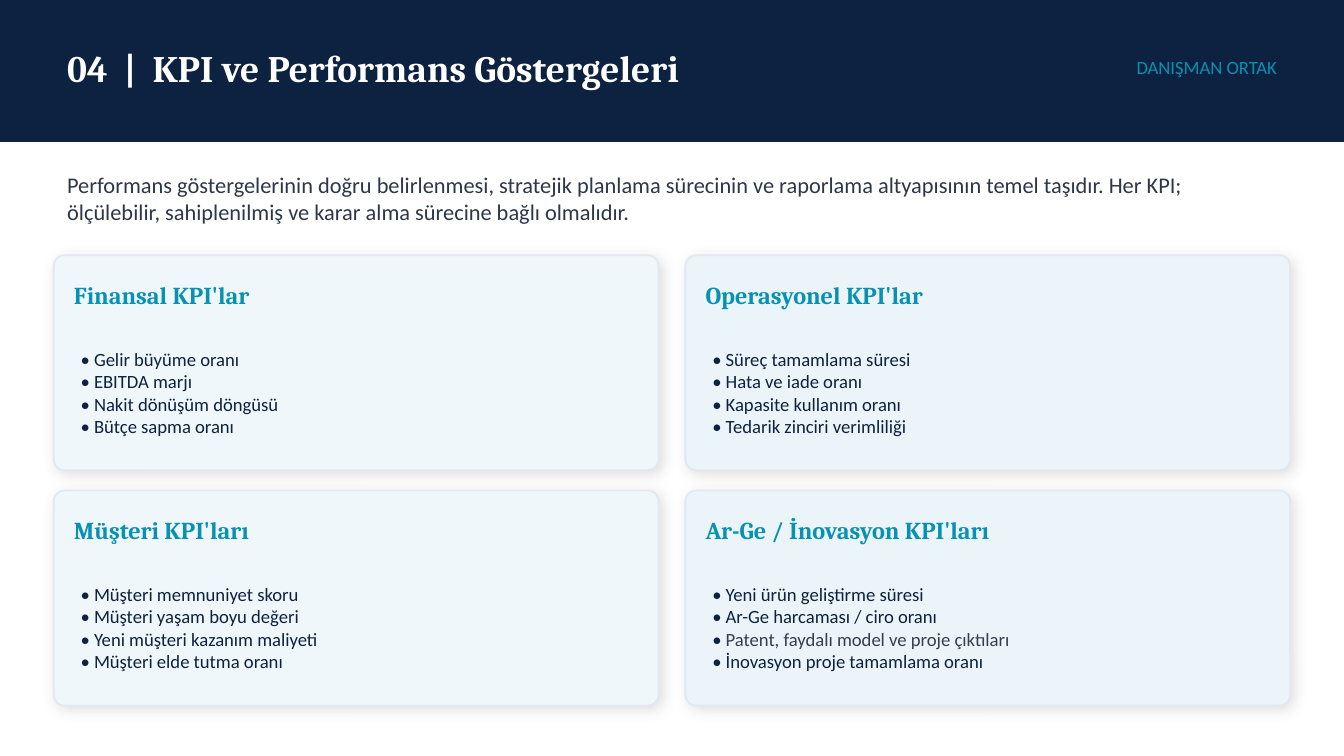
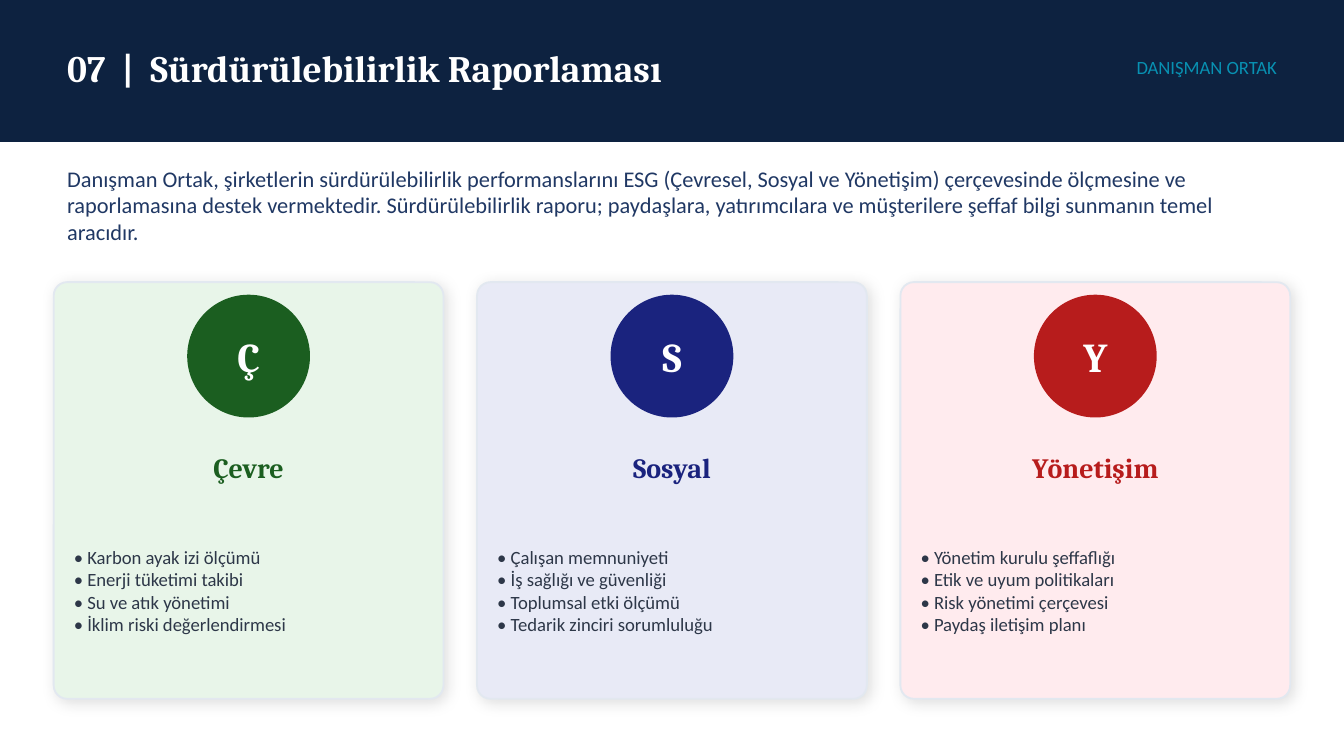
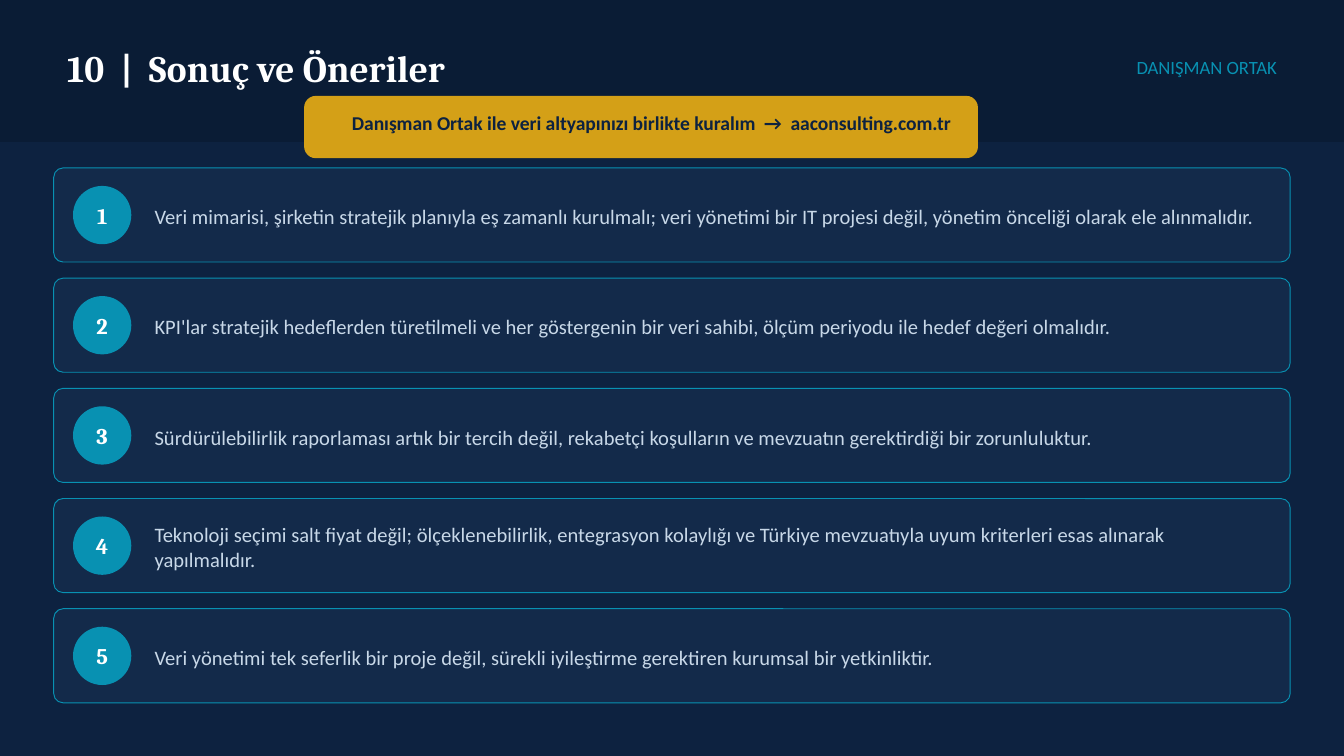
from pptx import Presentation
from pptx import util as u
from pptx.dml.color import RGBColor
from pptx.enum import shapes, text
from pptx.oxml import parse_xml
from pptx.oxml.ns import nsdecls, qn

COLOURS = {
    "white": "FFFFFF", "navy": "0D2240", "deep navy": "0A1C35", "panel": "132A4A",
    "teal": "0891B2", "gold": "D4A017", "ink": "2D3748", "indigo": "203864",
    "slate": "333F50", "mist": "C8D8E8", "border": "E2E8F0",
    "ice": "F0F7FA", "sky": "EBF4F8",
    "green": "1B5E20", "pale green": "E8F5E9",
    "blue": "1A237E", "pale blue": "E8EAF6",
    "red": "B71C1C", "pale red": "FFEBEE",
}
HEADING, BODY = "Cambria", "Calibri"
LEFT, CENTRE, RIGHT = text.PP_ALIGN.LEFT, text.PP_ALIGN.CENTER, text.PP_ALIGN.RIGHT
RECT = shapes.MSO_SHAPE.RECTANGLE
ROUNDED = shapes.MSO_SHAPE.ROUNDED_RECTANGLE
OVAL = shapes.MSO_SHAPE.OVAL
MARGIN = 0.4
FIRM = "Danışman Ortak"

KPI_GROUPS = [
    ("Finansal KPI'lar",
     ["Gelir büyüme oranı", "EBITDA marjı", "Nakit dönüşüm döngüsü", "Bütçe sapma oranı"]),
    ("Operasyonel KPI'lar",
     ["Süreç tamamlama süresi", "Hata ve iade oranı", "Kapasite kullanım oranı",
      "Tedarik zinciri verimliliği"]),
    ("Müşteri KPI'ları",
     ["Müşteri memnuniyet skoru", "Müşteri yaşam boyu değeri",
      "Yeni müşteri kazanım maliyeti", "Müşteri elde tutma oranı"]),
    ("Ar-Ge / İnovasyon KPI'ları",
     ["Yeni ürün geliştirme süresi", "Ar-Ge harcaması / ciro oranı",
      "Patent, faydalı model ve proje çıktıları", "İnovasyon proje tamamlama oranı"]),
]
ESG_PILLARS = [
    ("Çevre", "green",
     ["Karbon ayak izi ölçümü", "Enerji tüketimi takibi", "Su ve atık yönetimi",
      "İklim riski değerlendirmesi"]),
    ("Sosyal", "blue",
     ["Çalışan memnuniyeti", "İş sağlığı ve güvenliği", "Toplumsal etki ölçümü",
      "Tedarik zinciri sorumluluğu"]),
    ("Yönetişim", "red",
     ["Yönetim kurulu şeffaflığı", "Etik ve uyum politikaları", "Risk yönetimi çerçevesi",
      "Paydaş iletişim planı"]),
]
RECOMMENDATIONS = [
    "Veri mimarisi, şirketin stratejik planıyla eş zamanlı kurulmalı; veri yönetimi bir IT "
    "projesi değil, yönetim önceliği olarak ele alınmalıdır.",
    "KPI'lar stratejik hedeflerden türetilmeli ve her göstergenin bir veri sahibi, ölçüm "
    "periyodu ile hedef değeri olmalıdır.",
    "Sürdürülebilirlik raporlaması artık bir tercih değil, rekabetçi koşulların ve mevzuatın "
    "gerektirdiği bir zorunluluktur.",
    "Teknoloji seçimi salt fiyat değil; ölçeklenebilirlik, entegrasyon kolaylığı ve Türkiye "
    "mevzuatıyla uyum kriterleri esas alınarak yapılmalıdır.",
    "Veri yönetimi tek seferlik bir proje değil, sürekli iyileştirme gerektiren kurumsal bir "
    "yetkinliktir.",
]


def rgb(colour):
    return RGBColor.from_string(COLOURS[colour])


def inches(*lengths):
    return [u.Inches(length) for length in lengths]


def style_run(run, size, colour, face=BODY, bold=False):
    run.font.size = u.Pt(size)
    run.font.name = face
    run.font.bold = bold
    run.font.color.rgb = rgb(colour)


class Deck:
    def __init__(self):
        self.prs = Presentation()
        self.prs.slide_width = u.Inches(10)
        self.prs.slide_height = self.prs.slide_width * 9 // 16
        self.slide = None

    def start_slide(self, title, background="white", band="navy"):
        """Add a slide with its title band and firm name."""
        self.slide = self.prs.slides.add_slide(self.prs.slide_layouts[6])
        fill = self.slide.background.fill
        fill.solid()
        fill.fore_color.rgb = rgb(background)
        self.shape(RECT, 0, 0, 10, 1.05, band)
        self.text(title, 0.5, 0.15, 8, 0.7, 20, "white", HEADING, True)
        self.text(FIRM.upper(), 0, 0.15, 9.5, 0.7, 10, "teal", align=RIGHT)

    def shape(self, kind, x, y, w, h, fill, line=None, weight=1, radius=None):
        shape = self.slide.shapes.add_shape(kind, *inches(x, y, w, h))
        shape.fill.solid()
        shape.fill.fore_color.rgb = rgb(fill)
        shape.line.color.rgb = rgb(line or fill)
        shape.line.width = u.Pt(weight)
        shape.shadow.inherit = False
        if radius:
            shape.adjustments[0] = radius / min(w, h)
        return shape

    def card(self, x, y, w, h, fill, radius):
        """Draw a rounded panel with a soft shadow."""
        card = self.shape(ROUNDED, x, y, w, h, fill, "border", radius=radius)
        effects = card._element.spPr.find(qn("a:effectLst"))
        effects.append(parse_xml(
            f'<a:outerShdw {nsdecls("a")} blurRad="{u.Pt(8)}" dist="{u.Pt(2)}" '
            f'dir="{45 * 60000}" algn="bl" rotWithShape="0">'
            '<a:srgbClr val="000000"><a:alpha val="13000"/></a:srgbClr></a:outerShdw>'))

    def text(self, content, x, y, w, h, size, colour, face=BODY, bold=False, align=LEFT):
        frame = self.slide.shapes.add_textbox(*inches(x, y, w, h)).text_frame
        frame.word_wrap = True
        frame.vertical_anchor = text.MSO_ANCHOR.MIDDLE
        frame.margin_left = frame.margin_right = frame.margin_top = frame.margin_bottom = 0
        frame.text = content
        for paragraph in frame.paragraphs:
            paragraph.alignment = align
            for run in paragraph.runs:
                style_run(run, size, colour, face, bold)
        return frame

    def bullets(self, items, x, y, w, h, colour):
        content = "\n".join(f"• {item}" for item in items)
        return self.text(content, x, y, w, h, 10, colour)

    def disc(self, label, x, y, diameter, size, fill):
        self.shape(OVAL, x, y, diameter, diameter, fill)
        self.text(label, x, y, diameter, diameter, size, "white", HEADING, True, CENTRE)


def add_kpi_slide(deck):
    deck.start_slide("04  |  KPI ve Performans Göstergeleri")
    deck.text("Performans göstergelerinin doğru belirlenmesi, stratejik planlama sürecinin ve "
              "raporlama altyapısının temel taşıdır. Her KPI; ölçülebilir, sahiplenilmiş ve "
              "karar alma sürecine bağlı olmalıdır.", 0.5, 1.15, 9, 0.65, 12, "ink")
    for index, (heading, indicators) in enumerate(KPI_GROUPS):
        row, column = divmod(index, 2)
        x, y = MARGIN + 4.7 * column, 1.9 + 1.75 * row
        deck.card(x, y, 4.5, 1.6, ("ice", "sky")[column], 0.08)
        deck.text(heading, x + 0.15, y + 0.1, 4.2, 0.38, 13, "teal", HEADING, True)
        indicator_list = deck.bullets(indicators, x + 0.2, y + 0.52, 4.1, 1, "navy")

    # The patent indicator in the last card has a greyer tone than its bullet.
    patent = indicator_list.paragraphs[2]
    patent.runs[0].text = "• "
    wording = patent.add_run()
    wording.text = indicators[2]
    style_run(wording, 10, "slate")


def add_esg_slide(deck):
    deck.start_slide("07  |  Sürdürülebilirlik Raporlaması")
    deck.text(f"{FIRM}, şirketlerin sürdürülebilirlik performanslarını ESG (Çevresel, Sosyal "
              "ve Yönetişim) çerçevesinde ölçmesine ve raporlamasına destek vermektedir. "
              "Sürdürülebilirlik raporu; paydaşlara, yatırımcılara ve müşterilere şeffaf bilgi "
              "sunmanın temel aracıdır.", 0.5, 1.15, 9, 0.75, 12, "indigo")
    for index, (pillar, colour, topics) in enumerate(ESG_PILLARS):
        x = MARGIN + 3.15 * index
        deck.card(x, 2.1, 2.9, 3.1, f"pale {colour}", 0.1)
        deck.disc(pillar[0], x + 1, 2.2, 0.9, 22, colour)
        deck.text(pillar, x, 3.25, 2.9, 0.45, 15, colour, HEADING, True, CENTRE)
        deck.bullets(topics, x + 0.15, 3.72, 2.6, 1.35, "ink")


def add_conclusion_slide(deck):
    deck.start_slide("10  |  Sonuç ve Öneriler", "navy", "deep navy")
    for index, recommendation in enumerate(RECOMMENDATIONS):
        y = 1.25 + 0.82 * index
        deck.shape(ROUNDED, MARGIN, y, 9.2, 0.7, "panel", "teal", 0.5, radius=0.07)
        deck.disc(str(index + 1), 0.55, y + 0.14, 0.42, 12, "teal")
        deck.text(recommendation, 1.15, y + 0.1, 8.25, 0.52, 11, "mist")
    deck.shape(ROUNDED, 2.27, 0.72, 5, 0.45, "gold", radius=0.08)
    deck.text(f"{FIRM} ile veri altyapınızı birlikte kuralım  →  aaconsulting.com.tr",
              2.35, 0.69, 5, 0.45, 10.5, "navy", bold=True, align=CENTRE)


def main():
    deck = Deck()
    add_kpi_slide(deck)
    add_esg_slide(deck)
    add_conclusion_slide(deck)
    deck.prs.save("out.pptx")


if __name__ == "__main__":
    main()
